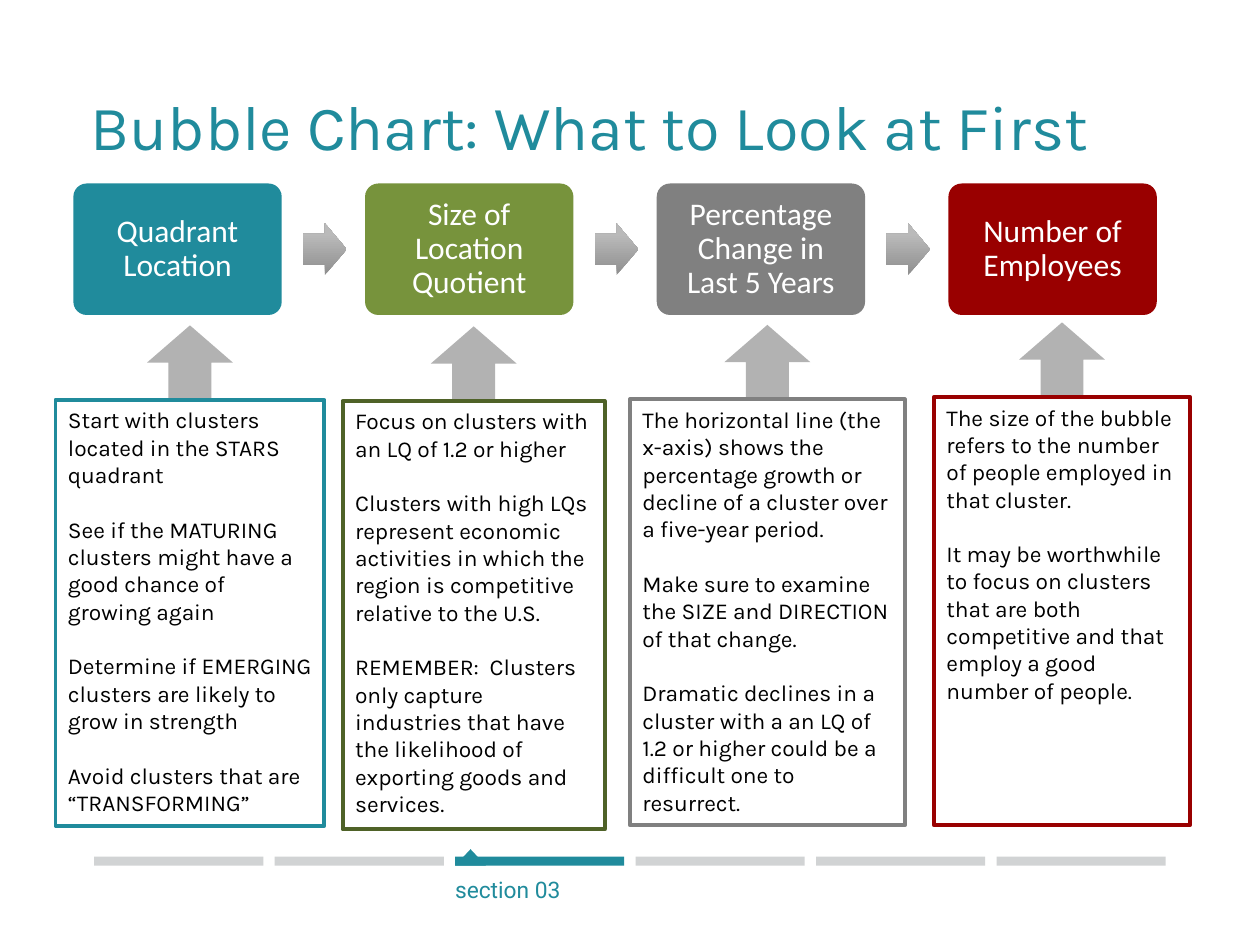
from pptx import Presentation
from pptx.dml.color import RGBColor
from pptx.enum.shapes import MSO_SHAPE
from pptx.enum.text import MSO_ANCHOR, MSO_AUTO_SIZE, PP_ALIGN
from pptx.util import Cm, Pt

HUES = {
    "teal": "208B9C", "green": "77933C", "olive": "4F6228",
    "gray": "808080", "red": "990000", "arrow": "B2B2B2",
    "dark": "8F8F8F", "light": "BABABA", "bar": "D1D3D4",
    "white": "FFFFFF", "black": "000000",
}

# Step name, fill, outline of its notes, box of its notes (cm), notes
STEPS = [
    ("Quadrant Location", "teal", "teal", (1.12, 8.06, 5.42, 8.59), [
        "Start with clusters located in the STARS quadrant",
        "See if the MATURING clusters might have a good chance of growing again",
        "Determine if EMERGING clusters are likely to grow in strength",
        "Avoid clusters that are “TRANSFORMING”"]),
    ("Size of Location Quotient", "green", "olive", (6.91, 8.08, 5.28, 8.64), [
        "Focus on clusters with an LQ of 1.2 or higher",
        "Clusters with high LQs represent economic activities in which the "
        "region is competitive relative to the U.S.",
        "REMEMBER:  Clusters only capture industries that have the likelihood "
        "of exporting goods and services."]),
    ("Percentage Change in Last 5 Years", "gray", "gray", (12.7, 8.05, 5.54, 8.59), [
        "The horizontal line (the x-axis) shows the percentage growth or "
        "decline of a cluster over a five-year period.",
        "Make sure to examine the SIZE and DIRECTION of that change.",
        "Dramatic declines in a cluster with a an LQ of 1.2 or higher could "
        "be a difficult one to resurrect."]),
    ("Number of Employees", "red", "red", (18.83, 8, 5.16, 8.64), [
        "The size of the bubble  refers to the number of people employed in "
        "that cluster.",
        "It may be worthwhile to focus on clusters that are both competitive "
        "and that employ a good number of people."]),
]


def hue(name):
    return RGBColor.from_string(HUES[name])


def paint(shape, fill):
    shape.shadow.inherit = False
    shape.fill.solid()
    shape.fill.fore_color.rgb = hue(fill)
    shape.line.fill.background()


def add(slide, kind, box, fill):
    shape = slide.shapes.add_shape(kind, *map(Cm, box))
    paint(shape, fill)
    return shape


def style(para, face, size, color, align=PP_ALIGN.LEFT):
    para.alignment = align
    para.font.name = face
    para.font.size = Pt(size)
    para.font.color.rgb = hue(color)


def pad(frame, x, y):
    frame.margin_left = frame.margin_right = Cm(x)
    frame.margin_top = frame.margin_bottom = Cm(y)
    frame.word_wrap = True


def add_title(slide, box, text):
    title = slide.shapes.title
    title.left, title.top, title.width, title.height = map(Cm, box)
    frame = title.text_frame
    frame.text = text
    frame.auto_size = MSO_AUTO_SIZE.NONE
    frame.vertical_anchor = MSO_ANCHOR.MIDDLE
    style(frame.paragraphs[0], "Karla", 36, "teal")


def add_flow(slide, box):
    """Row of steps joined by block arrows."""
    left, top, width, high = box
    wide = 4.2
    pitch = (width - wide) / (len(STEPS) - 1)
    for i, (name, fill, *_) in enumerate(STEPS):
        x = left + i * pitch
        step = add(slide, MSO_SHAPE.ROUNDED_RECTANGLE, (x, top, wide, high), fill)
        step.adjustments[0] = 0.1
        frame = step.text_frame
        frame.text = name
        frame.vertical_anchor = MSO_ANCHOR.MIDDLE
        pad(frame, 0.18, 0.18)
        para = frame.paragraphs[0]
        style(para, "Calibri", 18, "white", PP_ALIGN.CENTER)
        para.line_spacing = 0.9
        if i < len(STEPS) - 1:
            add_next(slide, (x + 4.63, top + (high - 1.04) / 2, 0.88, 1.04))


def add_next(slide, box):
    """Shaded arrow to the next step."""
    arrow = add(slide, MSO_SHAPE.RIGHT_ARROW, box, "arrow")
    arrow.adjustments[0] = 0.6
    arrow.adjustments[1] = 0.5
    arrow.fill.gradient()
    arrow.fill.gradient_angle = 90
    for stop, spot, tone in zip(arrow.fill.gradient_stops, (0, 0.8), ("dark", "light")):
        stop.position = spot
        stop.color.rgb = hue(tone)


def add_notes(slide, box, edge, notes):
    """Outlined notes with an arrow up to their step."""
    left, top, width, _ = box
    wide, high = 1.73, 1.5
    add(slide, MSO_SHAPE.UP_ARROW, (left + (width - wide) / 2, top - high, wide, high), "arrow")
    panel = add(slide, MSO_SHAPE.RECTANGLE, box, "white")
    panel.fill.background()
    panel.line.color.rgb = hue(edge)
    panel.line.width = Pt(2.25)
    frame = panel.text_frame
    frame.vertical_anchor = MSO_ANCHOR.TOP
    pad(frame, 0.25, 0.13)
    for i, note in enumerate(notes):
        para = frame.paragraphs[0] if i == 0 else frame.add_paragraph()
        para.text = note
        style(para, "Karla", 13, "black")
        para.space_before = Pt(15.6 if i else 0)


def add_track(slide, box, count, now):
    """Progress bars, with a marker and label at the current one."""
    left, top, width, high = box
    wide = 3.41
    pitch = (width - wide) / (count - 1)
    for i in range(count):
        tone = "teal" if i == now else "bar"
        add(slide, MSO_SHAPE.RECTANGLE, (left + i * pitch, top, wide, high), tone)
    x = left + now * pitch
    base = top + high
    path = slide.shapes.build_freeform(Cm(x), Cm(base))
    path.add_line_segments([(Cm(x + 0.31), Cm(base - 0.33)), (Cm(x + 0.62), Cm(base))])
    paint(path.convert_to_shape(), "teal")
    label = slide.shapes.add_textbox(Cm(x), Cm(top + 0.38), Cm(wide), Cm(0.56))
    frame = label.text_frame
    frame.text = f"section {now + 1:02}"
    pad(frame, 0, 0)
    style(frame.paragraphs[0], "Roboto", 13, "teal")


def main():
    deck = Presentation()
    deck.slide_width, deck.slide_height = Cm(25.4), Cm(19.05)
    slide = deck.slides.add_slide(deck.slide_layouts[5])
    add_title(slide, (1.57, 0.94, 22.86, 3.18), "Bubble Chart: What to Look at First")
    add_flow(slide, (1.48, 3.7, 21.84, 2.65))
    for _, _, edge, box, notes in STEPS:
        add_notes(slide, box, edge, notes)
    add_track(slide, (1.9, 17.27, 21.6, 0.18), 6, 2)
    deck.save("out.pptx")


if __name__ == "__main__":
    main()
